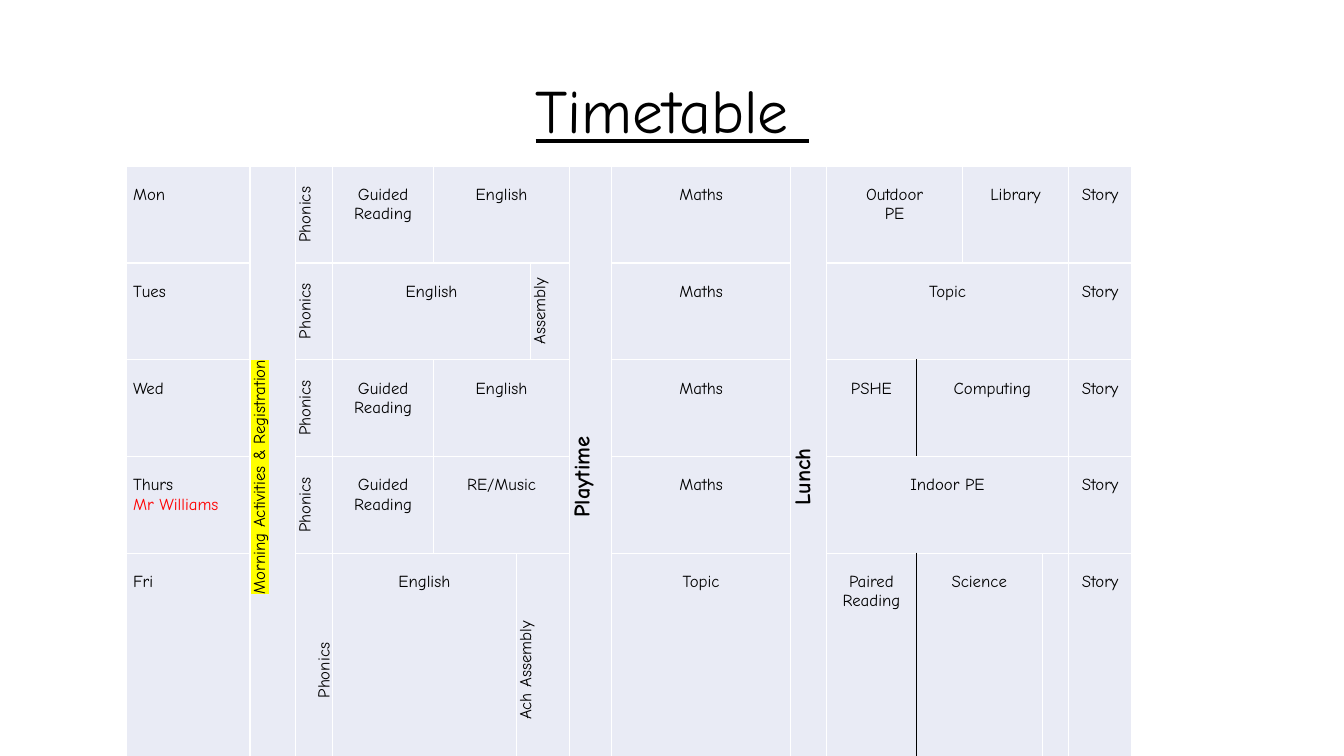
import pptx
import pptx.util
import pptx.dml.color
import pptx.enum.text
import pptx.oxml
import pptx.oxml.ns
from dataclasses import dataclass

Inches = pptx.util.Inches
Align = pptx.enum.text.PP_ALIGN
Anchor = pptx.enum.text.MSO_ANCHOR


@dataclass(frozen=True)
class Theme:
    face: str = "Comic Neue"
    ink: str = "000000"
    red: str = "FF0000"
    mark: str = "FFFF00"
    fill: str = "E9EBF5"
    head: int = 44
    big: int = 16
    body: int = 12
    line: float = 0.19
    pad: float = 0.07


THEME = Theme()
WIDE, HIGH = 13.33, 7.5
COLS = [1.23, 0.45, 0.37, 1, 0.82, 0.14, 0.39, 0.42, 1.77, 0.36, 0.89, 0.46, 0.79, 0.26, 0.63]
ROWS = [0.96] * 4 + [1.05]
MORN, PHON, READ, MATH, PLAY, LUNCH, NOON, STORY = 1, 2, 3, 8, 7, 9, 10, 14
GUIDED = (READ, 1, "Guided\nReading")
DAYS = [
    ("Mon", "Maths", [GUIDED, (4, 3, "English"), (NOON, 2, "Outdoor\nPE"), (12, 2, "Library")]),
    ("Tues", "Maths", [(READ, 3, "English"), (NOON, 4, "Topic")]),
    ("Wed", "Maths", [GUIDED, (4, 3, "English"), (NOON, 1, "PSHE"), (11, 3, "Computing")]),
    ("Thurs\nMr Williams", "Maths", [GUIDED, (4, 3, "RE/Music"), (NOON, 4, "Indoor PE")]),
    ("Fri", "Topic", [(READ, 2, "English"), (NOON, 1, "Paired Reading"), (11, 2, "Science")]),
]
BREAKS = [(MORN, "Morning Activities & Registration", THEME.body),
          (PLAY, "Playtime", THEME.big), (LUNCH, "Lunch", THEME.big)]
SPLIT = [2, 4]


def style(item, form):
    for key, val in form.items():
        setattr(item, key, val)


def tint(code):
    return pptx.dml.color.RGBColor.from_string(code)


def ink(run, size, color=THEME.ink, **more):
    style(run.font, dict(name=THEME.face, size=pptx.util.Pt(size), **more))
    run.font.color.rgb = tint(color)


def write(cell, text, size=THEME.body, align=Align.CENTER, top=THEME.line, turn=False):
    style(cell, dict(margin_left=Inches(THEME.pad), margin_right=Inches(THEME.pad),
                     margin_top=Inches(top), margin_bottom=0,
                     vertical_anchor=Anchor.TOP))
    if turn:
        cell._tc.get_or_add_tcPr().set("vert", "vert270")
    cell.text = text
    for i, para in enumerate(cell.text_frame.paragraphs):
        para.alignment = align
        color = THEME.red if align == Align.LEFT and i else THEME.ink
        for run in para.runs:
            ink(run, size, color, bold=size == THEME.big)


def mark(cell):
    xml = (f'<a:highlight {pptx.oxml.ns.nsdecls("a")}>'
           f'<a:srgbClr val="{THEME.mark}"/></a:highlight>')
    for run in cell.text_frame.paragraphs[0].runs:
        font = run._r.get_or_add_rPr()
        font.find(pptx.oxml.ns.qn("a:latin")).addprevious(pptx.oxml.parse_xml(xml))


def edge(cell, side):
    xml = (f'<a:{side} {pptx.oxml.ns.nsdecls("a")} w="12700"><a:solidFill>'
           f'<a:srgbClr val="{THEME.ink}"/></a:solidFill></a:{side}>')
    cell._tc.get_or_add_tcPr().insert(0, pptx.oxml.parse_xml(xml))


def span(grid, row, col, tall, wide):
    cell = grid.cell(row, col)
    if tall * wide > 1:
        cell.merge(grid.cell(row + tall - 1, col + wide - 1))
    return cell


def title(slide, left, top, wide, high):
    shape = slide.shapes.title
    style(shape, dict(left=Inches(left), top=Inches(top),
                      width=Inches(wide), height=Inches(high)))
    frame = shape.text_frame
    frame.text = "Timetable "
    frame.vertical_anchor = Anchor.MIDDLE
    style(frame.paragraphs[0], dict(alignment=Align.CENTER, line_spacing=0.9))
    ink(frame.paragraphs[0].runs[0], THEME.head, underline=True)


def week(slide, left, top):
    grid = slide.shapes.add_table(
        len(ROWS), len(COLS), Inches(left), Inches(top),
        Inches(sum(COLS)), Inches(sum(ROWS))).table
    style(grid, dict(first_row=False, horz_banding=False))
    for col, size in zip(grid.columns, COLS):
        col.width = Inches(size)
    for row, size in zip(grid.rows, ROWS):
        row.height = Inches(size)
    for cell in grid.iter_cells():
        cell.fill.solid()
        cell.fill.fore_color.rgb = tint(THEME.fill)
    for col, text, size in BREAKS:
        write(span(grid, 0, col, len(ROWS), 1), text, size, top=0, turn=True)
    mark(grid.cell(0, MORN))
    for row, (day, mid, tasks) in enumerate(DAYS):
        write(grid.cell(row, 0), day, align=Align.LEFT)
        shift = THEME.line if day == "Fri" else 0
        write(grid.cell(row, PHON), "Phonics", top=shift, turn=True)
        for col, wide, text in tasks + [(MATH, 1, mid), (STORY, 1, "Story")]:
            write(span(grid, row, col, 1, wide), text)
    for row, col, wide, text in [(1, 6, 1, "Assembly"), (4, 5, 2, "Ach Assembly")]:
        write(span(grid, row, col, 1, wide), text, top=0, turn=True)
    for row in SPLIT:
        edge(grid.cell(row, NOON), "lnR")
        edge(grid.cell(row, NOON + 1), "lnL")


def main():
    deck = pptx.Presentation()
    style(deck, dict(slide_width=Inches(WIDE), slide_height=Inches(HIGH)))
    slide = deck.slides.add_slide(deck.slide_layouts[5])
    title(slide, 0.92, 0.4, 11.5, 1.45)
    week(slide, 1.25, 1.65)
    deck.save("out.pptx")


if __name__ == "__main__":
    main()
